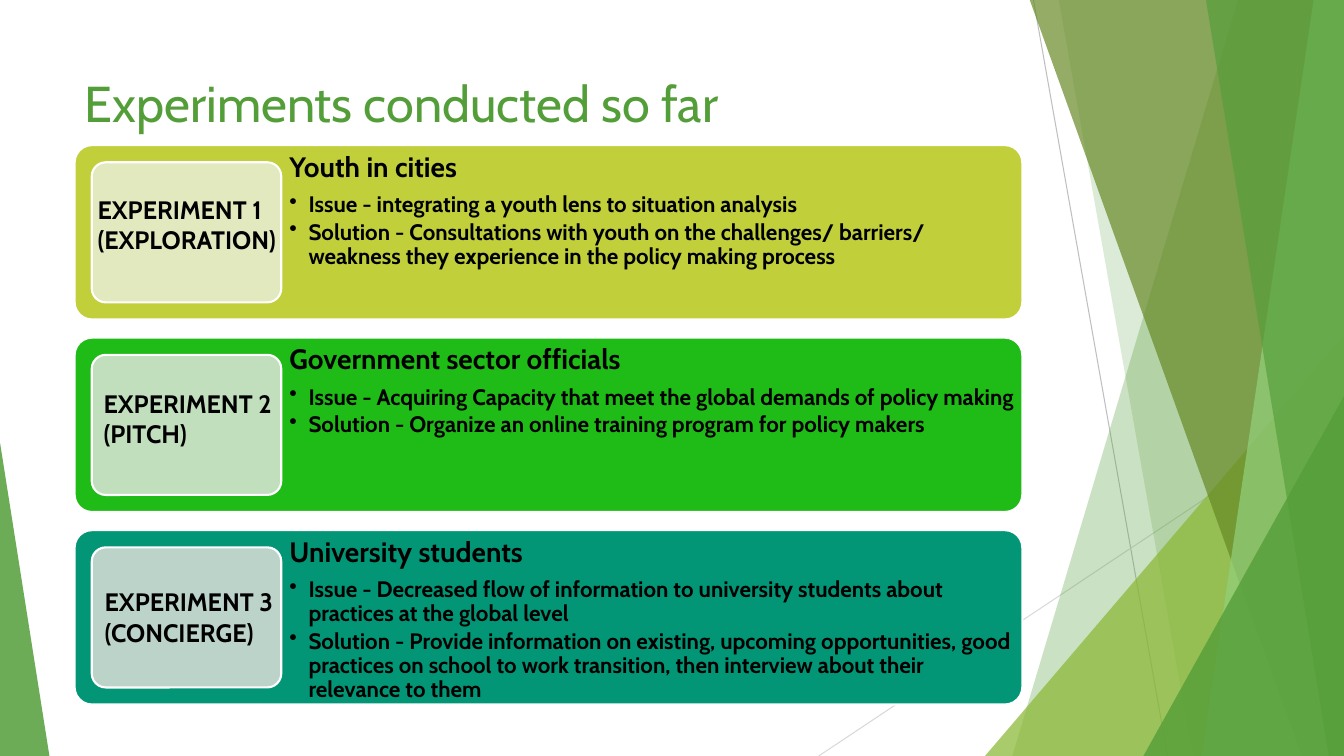
"""Build the slide of experiments conducted so far."""
from dataclasses import dataclass

import pptx
import pptx.dml.color
import pptx.enum.shapes
import pptx.enum.text
import pptx.oxml
import pptx.oxml.ns
import pptx.util

PX = 9144
WIDE, HIGH = 1333, 750
KIND = pptx.enum.shapes.MSO_SHAPE


@dataclass(frozen=True)
class Theme:
    """Hold the colours, font and type sizes."""
    font: str = "Cabin"
    green: str = "549E39"
    lime: str = "8AB833"
    olive: str = "678A26"
    mint: str = "93D07D"
    ink: str = "000000"
    white: str = "FFFFFF"
    gray: str = "BFBFBF"
    pale: str = "D9D9D9"
    title: int = 36
    head: int = 20
    label: int = 18
    body: int = 16


LOOK = Theme()

CARDS = [
    ("C0CF3A", "E2E9BF", "EXPERIMENT 1 (EXPLORATION)", (87, 188, 202, 101),
     "Youth in cities",
     ["Issue - integrating a youth lens to situation analysis",
      "Solution - Consultations with youth on the challenges/ barriers/ "
      "weakness they experience in the policy making process"]),
    ("1FBB16", "C1DFBD", "EXPERIMENT 2 (PITCH)", (93, 380, 190, 101),
     "Government sector officials",
     ["Issue - Acquiring Capacity that meet the global demands of policy making",
      "Solution - Organize an online training program for policy makers"]),
    ("029676", "BCD3CA", "EXPERIMENT 3 (CONCIERGE)", (94, 577, 190, 101),
     "University students",
     ["Issue - Decreased flow of information to university students about "
      "practices at the global level",
      "Solution - Provide information on existing, upcoming opportunities, "
      "good practices on school to work transition, then interview about "
      "their relevance to them"]),
]


def px(*nums):
    """Turn px lengths into EMU."""
    return [pptx.util.Emu(num * PX) for num in nums]


def tint(hue):
    """Return a colour from its hex text."""
    return pptx.dml.color.RGBColor.from_string(hue)


def node(base, tag, **attrs):
    """Add a drawing element to a base element."""
    item = pptx.oxml.parse_xml(f"<a:{tag} {pptx.oxml.ns.nsdecls('a')}/>")
    for key, val in attrs.items():
        item.set(key, str(val))
    base.append(item)


def paint(shape, hue, alpha=100, edge=None):
    """Set the fill, its opacity and the outline."""
    shape.shadow.inherit = False
    shape.fill.solid()
    shape.fill.fore_color.rgb = tint(hue)
    if alpha < 100:
        clr = shape.fill._xPr.find(".//" + pptx.oxml.ns.qn("a:srgbClr"))
        node(clr, "alpha", val=alpha * 1000)
    if edge:
        shape.line.color.rgb = tint(edge)
        shape.line.width = pptx.util.Pt(1.5)
    else:
        shape.line.fill.background()


def line(slide, start, end, hue):
    """Draw a thin straight line."""
    link = slide.shapes.add_connector(
        pptx.enum.shapes.MSO_CONNECTOR.STRAIGHT, *px(*start, *end))
    link.line.color.rgb = tint(hue)
    link.line.width = pptx.util.Pt(0.75)
    node(link._element.spPr, "effectLst")


def shard(slide, top, foot, hue, alpha):
    """Draw a strip from a slanted left side to the right slide edge."""
    form = slide.shapes.build_freeform(top, -1, scale=PX)
    form.add_line_segments([(WIDE, -1), (WIDE, HIGH), (foot, HIGH)], close=True)
    paint(form.convert_to_shape(), hue, alpha)


def block(slide, kind, box, bend, hue, alpha=100, edge=None):
    """Draw a preset shape with one adjustment."""
    shape = slide.shapes.add_shape(kind, *px(*box))
    shape.adjustments[0] = bend
    paint(shape, hue, alpha, edge)


def frame(slide, box, inset=None):
    """Add a wrapping text box and return its text frame."""
    text = slide.shapes.add_textbox(*px(*box)).text_frame
    text.word_wrap = True
    text.vertical_anchor = pptx.enum.text.MSO_ANCHOR.TOP
    if inset is not None:
        text.margin_left, text.margin_top = px(inset, inset)
        text.margin_right, text.margin_bottom = px(inset, inset)
    return text


def write(text, words, size, hue=LOOK.ink, bold=True, gap=0, space=1.0,
          dot=False):
    """Write one paragraph in the given format."""
    para = text.paragraphs[0]
    if para.runs:
        para = text.add_paragraph()
    para.line_spacing = space
    para.space_after = pptx.util.Pt(gap)
    if dot:
        props = para._p.get_or_add_pPr()
        props.set("marL", str(19 * PX))
        props.set("indent", str(-19 * PX))
        node(props, "buChar", char="•")
    run = para.add_run()
    run.text = words
    run.font.name = LOOK.font
    run.font.size = pptx.util.Pt(size)
    run.font.bold = bold
    run.font.color.rgb = tint(hue)


def scene(slide):
    """Draw the green backdrop."""
    line(slide, (1025, 0), (1158, HIGH), LOOK.gray)
    line(slide, (WIDE, 403), (812, HIGH), LOOK.pale)
    tri = KIND.ISOSCELES_TRIANGLE
    shard(slide, 1228, 1004, LOOK.green, 30)
    shard(slide, 1050, 1183, LOOK.green, 20)
    block(slide, tri, (977, 333, 356, 417), 1, LOOK.lime, 72)
    shard(slide, 1021, 1291, LOOK.olive, 70)
    shard(slide, 1303, 1192, LOOK.mint, 70)
    shard(slide, 1196, 1318, LOOK.green, 65)
    block(slide, tri, (1134, 393, 199, 357), 1, LOOK.green, 80)
    block(slide, tri, (0, 439, 49, 311), 0, LOOK.green, 85)


def card(slide, top, hue, pale, label, spot, head, points):
    """Draw one experiment with its label and points."""
    pill = KIND.ROUNDED_RECTANGLE
    block(slide, pill, (74, top, 940, 173), 0.1, hue, edge=LOOK.white)
    text = frame(slide, (279, top, 735, 173), 8)
    write(text, head, LOOK.head, gap=7, space=0.9)
    for point in points:
        write(text, point, LOOK.body, gap=2.4, space=0.9, dot=True)
    block(slide, pill, (91, top + 17, 188, 139), 0.1, pale, edge=LOOK.white)
    write(frame(slide, spot), label, LOOK.label)


def main():
    """Build and save the slide."""
    deck = pptx.Presentation()
    deck.slide_width, deck.slide_height = px(WIDE, HIGH)
    slide = deck.slides.add_slide(deck.slide_layouts[6])
    scene(slide)
    title = frame(slide, (74, 67, 940, 144))
    write(title, "Experiments conducted so far", LOOK.title,
          hue=LOOK.green, bold=False)
    for row, facts in enumerate(CARDS):
        card(slide, 144 + 191 * row, *facts)
    deck.save("out.pptx")


if __name__ == "__main__":
    main()
